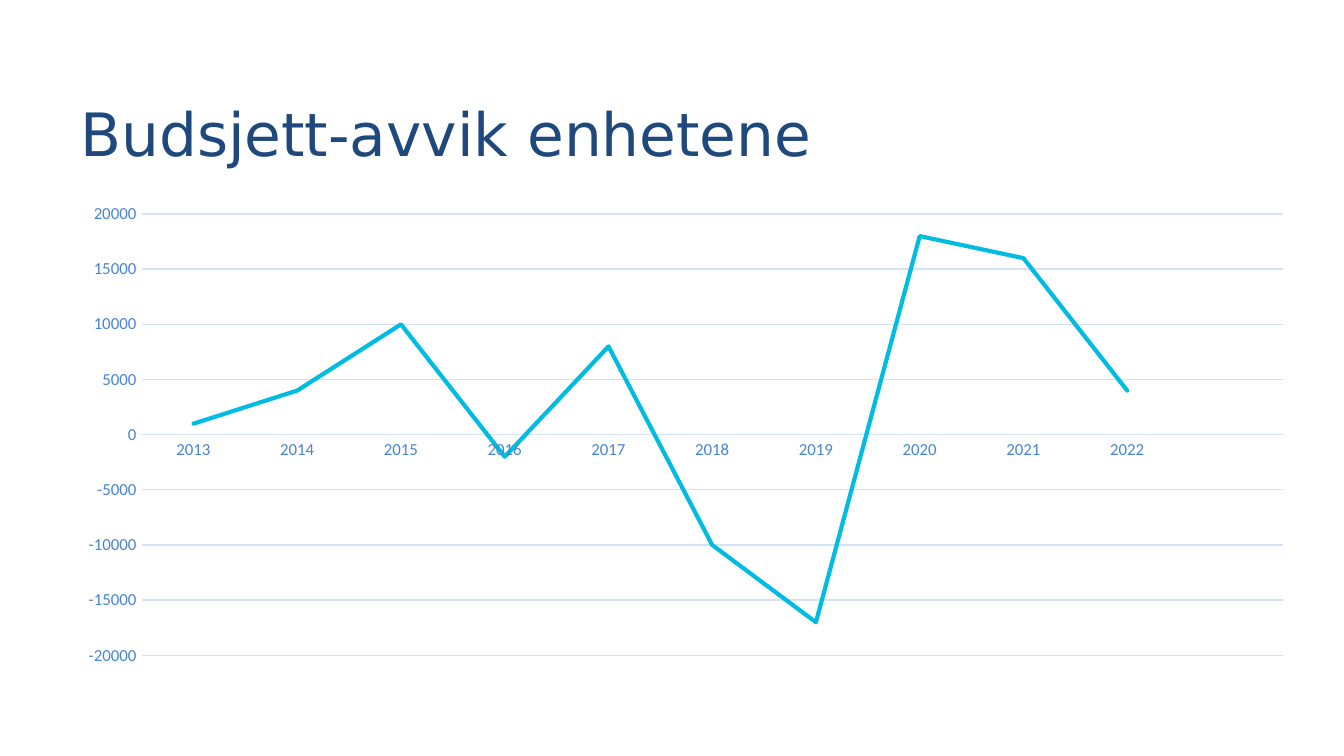
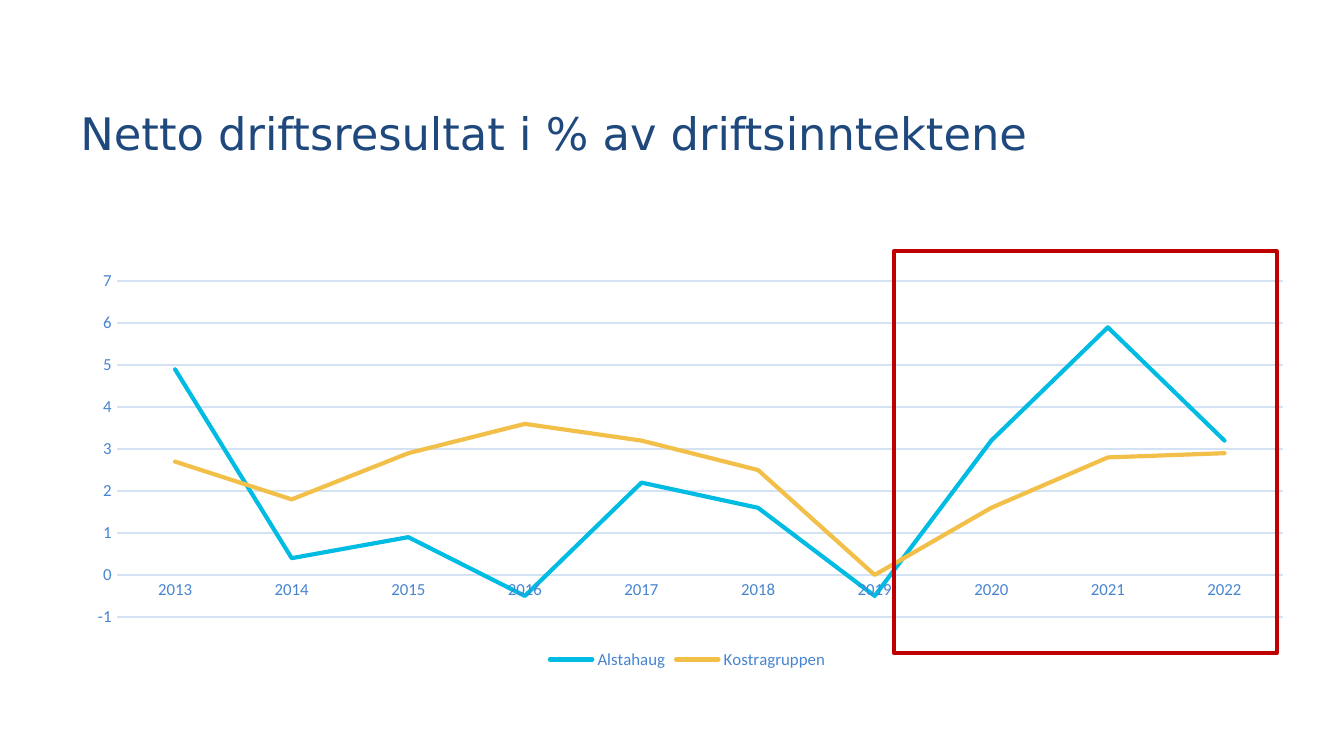
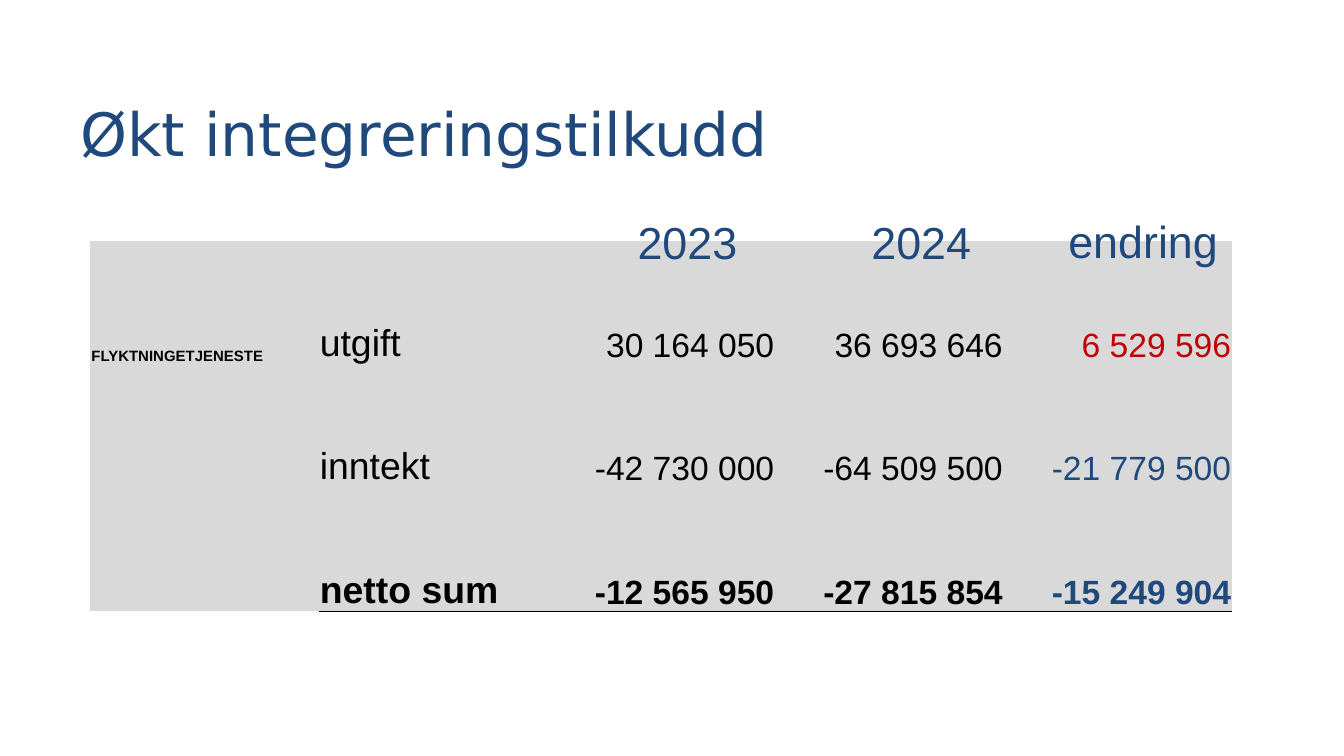
from lxml import etree
from pptx import Presentation
from pptx.chart.data import CategoryChartData as ChartData
from pptx.dml.color import RGBColor as RGB
from pptx.enum.chart import XL_CHART_TYPE as Kind, XL_LEGEND_POSITION as Spot, XL_TICK_MARK as Tick
from pptx.enum.shapes import MSO_SHAPE as Shape
from pptx.enum.text import MSO_ANCHOR as Anchor, PP_ALIGN as Align
from pptx.oxml import parse_xml
from pptx.oxml.ns import nsdecls, qn
from pptx.util import Inches as In, Pt

# Shared look
HUES = {"navy": "1F497D", "label": "4785D1", "grid": "D4E3F4", "cyan": "00BCE2",
        "gold": "F2BF49", "red": "C00000", "grey": "D9D9D9", "black": "000000"}
HEAD, BODY, PLOT = "DejaVu Sans", "Arial", "Calibri"
WIDE = 10
HIGH = WIDE * 9 / 16
TITLE = (0.5, 0.52, 7.57, 0.94)
CHART = (0.5, 1.45, 9.23, 3.57)
NO_STYLE = "{2D5ABB26-0587-4C30-8999-92F81FD0307C}"

# Content: layout is left, top, width, height as shares of the chart
YEARS = [str(y) for y in range(2013, 2023)]
BUDGET = dict(
    cats=YEARS + [""], layout=(0.06, 0.04, 0.92, 0.92), scale=(-20000, 20000, 5000),
    series=[("Series 1", "cyan", [1000, 4000, 10000, -2000, 8000, -10000,
                                  -17000, 18000, 16000, 4000, None])])
RESULT = dict(
    cats=YEARS, layout=(0.04, 0.18, 0.94, 0.7), scale=(-1, 7, 1), legend=True,
    series=[("Alstahaug", "cyan", [4.9, 0.4, 0.9, -0.5, 2.2, 1.6, -0.5, 3.2, 5.9, 3.2]),
            ("Kostragruppen", "gold", [2.7, 1.8, 2.9, 3.6, 3.2, 2.5, 0, 1.6, 2.8, 2.9])])
FOCUS = (6.65, 1.87, 2.85, 2.99)
GRANT = [("FLYKTNINGETJENESTE", "utgift", "30 164 050", "36 693 646", "6 529 596"),
         ("", "inntekt", "-42 730 000", "-64 509 500", "-21 779 500"),
         ("", "netto sum", "-12 565 950", "-27 815 854", "-15 249 904")]
GRID = (0.67, 1.79, 1.7, 0.92)  # left, top, column, row
HEADS = [("2023", 4.6, 1.55, 1.03), ("2024", 6.34, 1.55, 1.03), ("endring", 7.76, 1.54, 1.49)]


def hue(name):
    return RGB.from_string(HUES[name])


def style(font, size, name, face, bold=False):
    font.size, font.name, font.bold = Pt(size), face, bold
    font.color.rgb = hue(name)


def stroke(line, name, width):
    line.color.rgb, line.width = hue(name), Pt(width)


def add_text(slide, text, box, size, face, align=Align.LEFT, anchor=Anchor.TOP):
    frame = slide.shapes.add_textbox(*map(In, box)).text_frame
    frame.word_wrap, frame.vertical_anchor = True, anchor
    para = frame.paragraphs[0]
    para.text, para.alignment = text, align
    style(para.font, size, "navy", face)


def new_slide(deck, title, size=32):
    slide = deck.slides.add_slide(deck.slide_layouts[6])
    add_text(slide, title, TITLE, size, HEAD, anchor=Anchor.MIDDLE)
    return slide


def set_plot(chart, layout):
    area = chart._chartSpace.chart.plotArea
    for old in area.findall(qn("c:layout")):
        area.remove(old)
    node = parse_xml(f"<c:layout {nsdecls('c')}/>")
    manual = etree.SubElement(node, qn("c:manualLayout"))
    parts = [("layoutTarget", "inner"), ("xMode", "edge"), ("yMode", "edge")]
    for tag, val in parts + list(zip("xywh", layout)):
        etree.SubElement(manual, qn("c:" + tag)).set("val", str(val))
    area.insert(0, node)


def add_lines(slide, cats, layout, scale, series, legend=False):
    data = ChartData()
    data.categories = cats
    for name, _, vals in series:
        data.add_series(name, vals)
    chart = slide.shapes.add_chart(Kind.LINE, *map(In, CHART), data).chart
    style(chart.font, 10, "navy", PLOT)
    chart.has_title, chart.has_legend = False, legend
    if legend:
        chart.legend.position = Spot.BOTTOM
        chart.legend.include_in_layout = False
        style(chart.legend.font, 9, "label", PLOT)
    # Axes
    across, up = chart.category_axis, chart.value_axis
    for axis in (across, up):
        axis.major_tick_mark = axis.minor_tick_mark = Tick.NONE
        style(axis.tick_labels.font, 9, "label", PLOT)
    stroke(across.format.line, "grid", 0.75)
    up.format.line.fill.background()
    stroke(up.major_gridlines.format.line, "grid", 0.75)
    up.minimum_scale, up.maximum_scale, up.major_unit = scale
    # Series
    plot = chart.plots[0]
    plot.vary_by_categories = False
    for line, (_, name, _) in zip(plot.series, series):
        line.smooth = False
        stroke(line.format.line, name, 2.25)
        line.format.line._get_or_add_ln().set("cap", "rnd")
    set_plot(chart, layout)


def add_frame(slide, box):
    frame = slide.shapes.add_shape(Shape.RECTANGLE, *map(In, box))
    frame.shadow.inherit = False
    frame.fill.background()
    stroke(frame.line, "red", 2)


def underline(cell):
    edge = parse_xml(f'<a:lnB {nsdecls("a")} w="{Pt(0.5)}"><a:solidFill>'
                     f'<a:srgbClr val="{HUES["black"]}"/></a:solidFill></a:lnB>')
    cell._tc.get_or_add_tcPr().insert(0, edge)


def add_grid(slide, rows):
    left, top, wide, high = GRID
    count, cols = len(rows), len(rows[0])
    table = slide.shapes.add_table(count, cols, In(left), In(top),
                                   In(wide * cols), In(high * count)).table
    table.first_row = table.horz_banding = False
    table._tbl.tblPr.find(qn("a:tableStyleId")).text = NO_STYLE
    for r, row in enumerate(rows):
        table.rows[r].height = In(high)
        last = r == count - 1
        for c, text in enumerate(row):
            cell = table.cell(r, c)
            cell.fill.solid()
            cell.fill.fore_color.rgb = hue("grey")
            cell.margin_left = cell.margin_right = cell.margin_top = In(0.01)
            cell.margin_bottom = 0
            cell.vertical_anchor = Anchor.BOTTOM
            para = cell.text_frame.paragraphs[0]
            para.text = text
            para.alignment = Align.RIGHT if c > 1 else Align.LEFT
            name = "black" if c < cols - 1 else "navy" if text.startswith("-") else "red"
            style(para.font, {0: 8, 1: 20}.get(c, 18), name, BODY, c == 0 or last)
            if last and c:
                underline(cell)
    for col in table.columns:
        col.width = In(wide)


def main():
    deck = Presentation()
    deck.slide_width, deck.slide_height = In(WIDE), In(HIGH)

    # Budget deviation
    add_lines(new_slide(deck, "Budsjett-avvik enhetene"), **BUDGET)

    # Net result, with the latest years framed
    slide = new_slide(deck, "Netto driftsresultat i % av driftsinntektene", 24)
    add_lines(slide, **RESULT)
    add_frame(slide, FOCUS)

    # Integration grant
    slide = new_slide(deck, "Økt integreringstilkudd")
    add_grid(slide, GRANT)
    for text, left, top, wide in HEADS:
        add_text(slide, text, (left, top, wide, 0.5), 24, BODY, Align.CENTER)

    deck.save("out.pptx")


if __name__ == "__main__":
    main()
